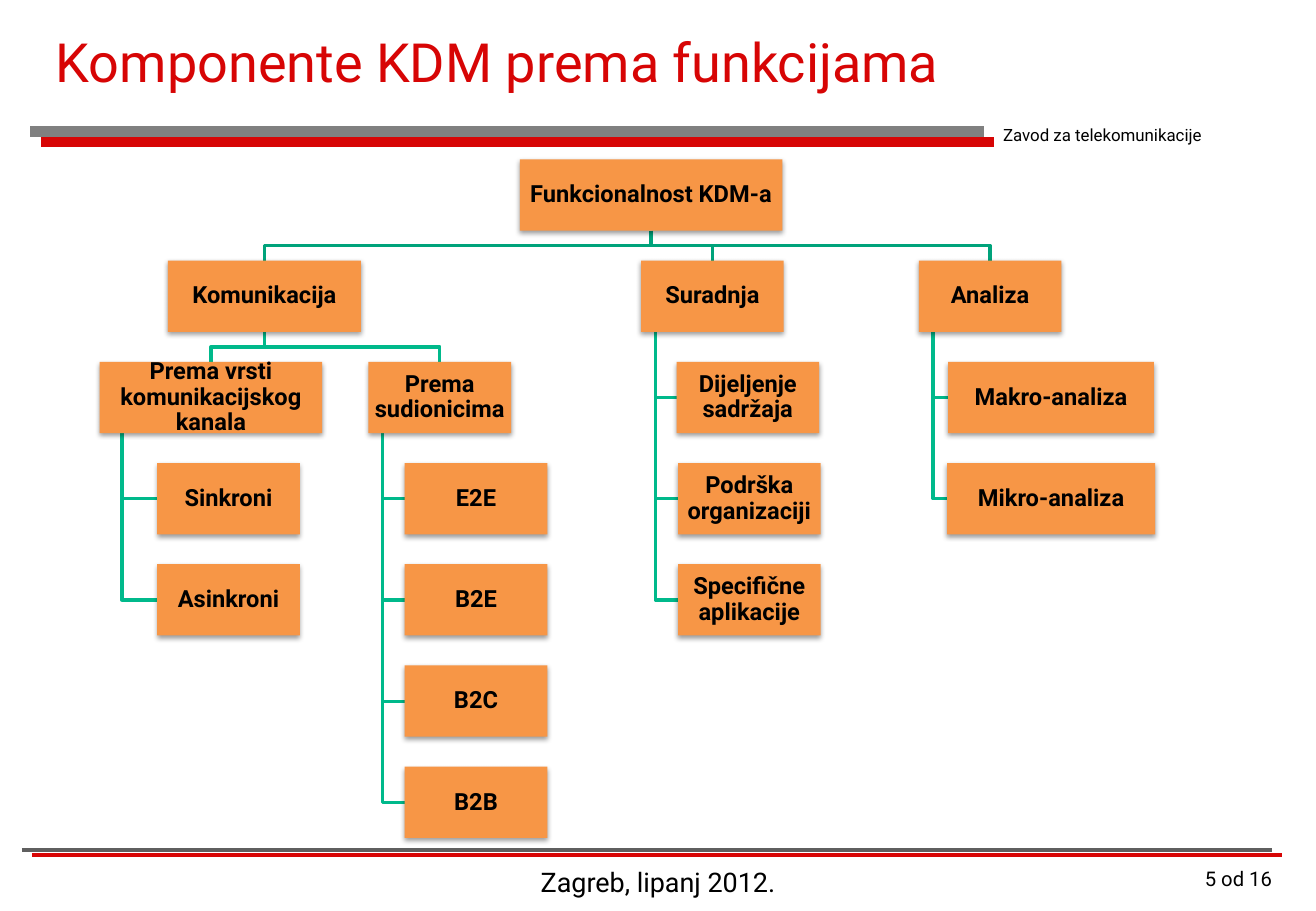
from collections import namedtuple
from lxml import etree
from pptx import Presentation
from pptx.dml.color import RGBColor
from pptx.enum.shapes import MSO_CONNECTOR, MSO_SHAPE
from pptx.enum.text import MSO_ANCHOR, PP_ALIGN
from pptx.oxml.ns import qn
from pptx.util import Pt

LEFT, CENTER, RIGHT = PP_ALIGN.LEFT, PP_ALIGN.CENTER, PP_ALIGN.RIGHT
TOP, MIDDLE = MSO_ANCHOR.TOP, MSO_ANCHOR.MIDDLE
RECT, STRAIGHT = MSO_SHAPE.RECTANGLE, MSO_CONNECTOR.STRAIGHT

FONT = "Roboto"
COLORS = {
    "red": "D70505", "gray": "808080", "dark_gray": "5F5F5F", "black": "000000",
    "box": "F79646", "link_top": "00A37B", "link": "00B98B",
}
BOX_H, ROW_STEP = 42.25, 60
SMALL_W = 84.5

# x is measured from the left edge of the chart; "fan" spreads children
# below the parent, "hang" lists them along a spine
Node = namedtuple("Node", "text x w mode children", defaults=("hang", ()))

TREE = Node("Funkcionalnost KDM-a", 249.2, 155.5, "fan", (
    Node("Komunikacija", 40.5, 114.5, "fan", (
        Node("Prema vrsti komunikacijskog kanala", 0, 132, "hang", tuple(
            Node(t, 34.2, SMALL_W) for t in ("Sinkroni", "Asinkroni"))),
        Node("Prema sudionicima", 159.4, SMALL_W, "hang", tuple(
            Node(t, 180.9, SMALL_W) for t in ("E2E", "B2E", "B2C", "B2B"))),
    )),
    Node("Suradnja", 321, SMALL_W, "hang", (
        Node("Dijeljenje sadržaja", 342, SMALL_W),
        Node("Podrška organizaciji", 342.9, SMALL_W),
        Node("Specifične aplikacije", 342.9, SMALL_W),
    )),
    Node("Analiza", 485.6, SMALL_W, "hang", (
        Node("Makro-analiza", 503, 122),
        Node("Mikro-analiza", 502.4, 123.3),
    )),
))


def rgb(name):
    return RGBColor.from_string(COLORS[name])


def add_shadow(sp, color, alpha, blur, dist, angle):
    spPr = sp._element.spPr
    effects = etree.SubElement(spPr, qn("a:effectLst"))
    shadow = etree.SubElement(
        effects, qn("a:outerShdw"), blurRad=str(Pt(blur)), dist=str(Pt(dist)),
        dir=str(angle * 60000), algn="ctr", rotWithShape="0")
    clr = etree.SubElement(shadow, qn("a:srgbClr"), val=COLORS[color])
    etree.SubElement(clr, qn("a:alpha"), val=str(alpha * 1000))


def write(sp, text, size, color="black", bold=False, align=LEFT, anchor=TOP,
          inset=None, spacing=None):
    tf = sp.text_frame
    tf.word_wrap = True
    tf.vertical_anchor = anchor
    if inset is not None:
        tf.margin_left = tf.margin_right = Pt(inset)
        tf.margin_top = tf.margin_bottom = Pt(inset)
    p = tf.paragraphs[0]
    p.alignment = align
    if spacing:
        p.line_spacing = spacing
    r = p.add_run()
    r.text = text
    r.font.name = FONT
    r.font.size = Pt(size)
    r.font.bold = bold
    r.font.color.rgb = rgb(color)


def add_text(slide, box, text, size, **fmt):
    write(slide.shapes.add_textbox(*map(Pt, box)), text, size, **fmt)


def add_rule(slide, x1, x2, y, color, width, dist, angle):
    line = slide.shapes.add_connector(STRAIGHT, Pt(x1), Pt(y), Pt(x2), Pt(y))
    line.line.color.rgb = rgb(color)
    line.line.width = Pt(width)
    add_shadow(line, "red", 100, 0, dist, angle)


def add_link(slide, points, color):
    (x, y), *rest = [(Pt(a), Pt(b)) for a, b in points]
    builder = slide.shapes.build_freeform(x, y)
    builder.add_line_segments(rest, close=False)
    sp = builder.convert_to_shape()
    sp.shadow.inherit = False
    sp.fill.background()
    sp.line.color.rgb = rgb(color)
    sp.line.width = Pt(2)


def add_node(slide, node, x, y):
    sp = slide.shapes.add_shape(RECT, Pt(x), Pt(y), Pt(node.w), Pt(BOX_H))
    sp.fill.solid()
    sp.fill.fore_color.rgb = rgb("box")
    sp.line.fill.background()
    add_shadow(sp, "black", 38, 3.1, 1.6, 90)
    write(sp, node.text, 14, bold=True, align=CENTER, anchor=MIDDLE,
          inset=0.72, spacing=0.9)


def place(node, left, y):
    """Yield every (node, x, y, placed children), parents first."""
    kids = []
    for i, kid in enumerate(node.children):
        row = 1 if node.mode == "fan" else i + 1
        kids.append((kid, left + kid.x, y + row * ROW_STEP))
    yield node, left + node.x, y, kids
    for kid, _, kid_y in kids:
        yield from place(kid, left, kid_y)


def org_chart(slide, left, top):
    placed = list(place(TREE, left, top))
    # Links
    for node, x, y, kids in placed:
        bottom = y + BOX_H
        for kid, kx, ky in kids:
            if node.mode == "fan":
                mid, px, cx = (bottom + ky) / 2, x + node.w / 2, kx + kid.w / 2
                points = [(px, bottom), (px, mid), (cx, mid), (cx, ky)]
            else:
                spine, cy = x + node.w / 10, ky + BOX_H / 2
                points = [(spine, bottom), (spine, cy), (kx, cy)]
            add_link(slide, points, "link_top" if node is TREE else "link")
    # Boxes
    for node, x, y, _ in placed:
        add_node(slide, node, x, y)


def header(slide, left, top):
    add_text(slide, (left + 8, top, 551, 72), "Komponente KDM prema funkcijama",
             32, color="red", anchor=MIDDLE)
    add_rule(slide, left, left + 565, top + 78, "gray", 6, 8.5, 45)
    add_text(slide, (left + 563, top + 70.6, 138.2, 19.4),
             "Zavod za telekomunikacije", 10, align=RIGHT)


def footer(slide, left, top):
    add_rule(slide, left, left + 741, top, "dark_gray", 2.25, 6.7, 27)
    add_text(slide, (left + 275, top + 5.8, 204, 30), "Zagreb, lipanj 2012.",
             16, align=CENTER)
    add_text(slide, (left + 585.3, top + 5.8, 162.7, 30), "5 od 16",
             12, align=RIGHT)


def main():
    prs = Presentation()
    prs.slide_width, prs.slide_height = Pt(780), Pt(540)
    slide = prs.slides.add_slide(prs.slide_layouts[6])
    header(slide, 18, 0)
    footer(slide, 13, 504)
    org_chart(slide, 59, 94.5)
    prs.save("out.pptx")


if __name__ == "__main__":
    main()
